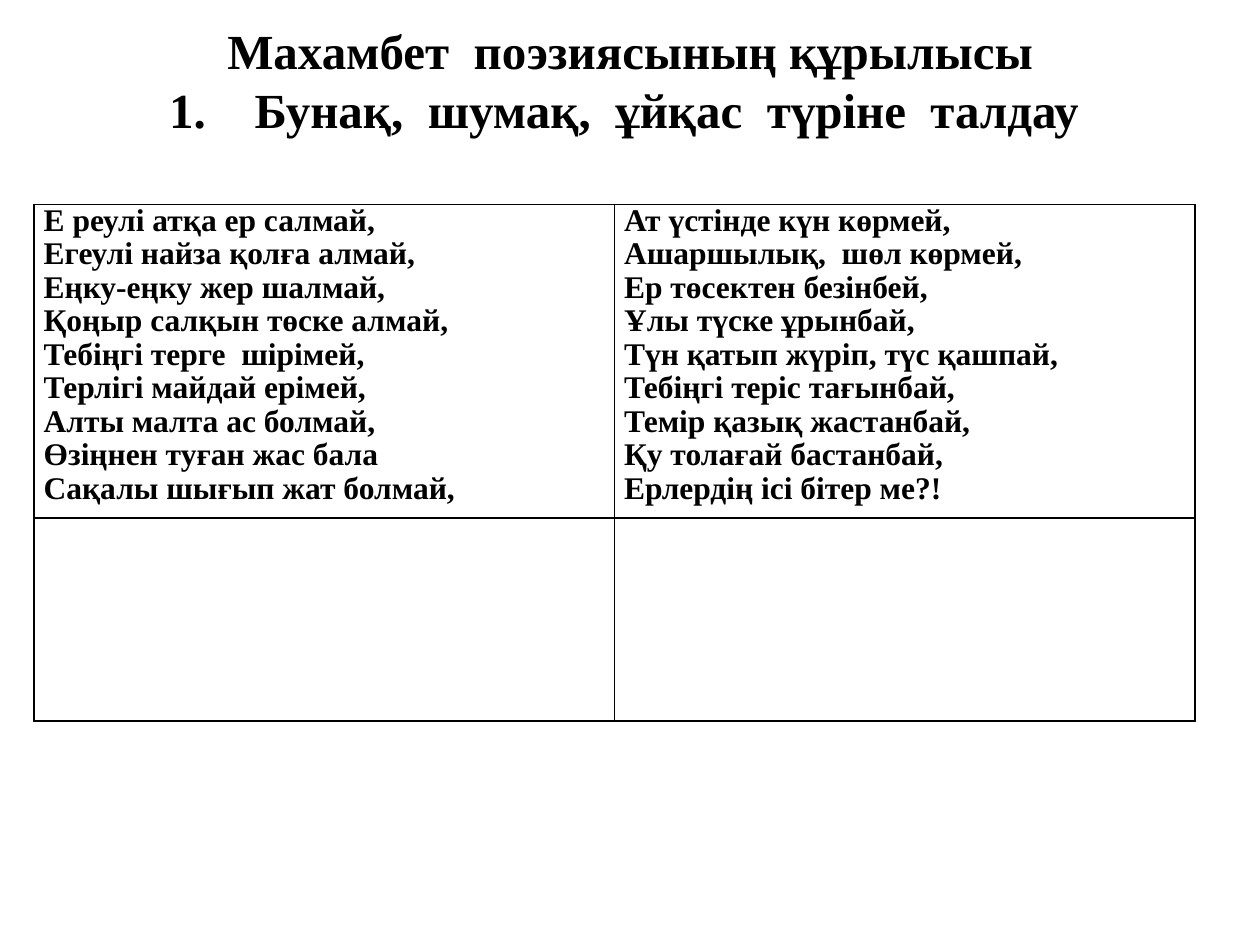
from lxml import etree
from pptx import Presentation
from pptx import util as u
from pptx.dml.color import RGBColor
from pptx.enum import text
from pptx.oxml import ns

BLACK = RGBColor(0x00, 0x00, 0x00)
FONT = "Times New Roman"

HEADING = ("Махамбет  поэзиясының құрылысы\v"
           "1.    Бунақ,  шумақ,  ұйқас  түріне  талдау ")
LEFT_VERSE = [
    "Е реулі атқа ер салмай,",
    "Егеулі найза қолға алмай,",
    "Еңку-еңку жер шалмай,",
    "Қоңыр салқын төске алмай,",
    "Тебіңгі терге  шірімей,",
    "Терлігі майдай ерімей,",
    "Алты малта ас болмай,",
    "Өзіңнен туған жас бала",
    "Сақалы шығып жат болмай,",
]
RIGHT_VERSE = [
    "Ат үстінде күн көрмей,",
    "Ашаршылық,  шөл көрмей,",
    "Ер төсектен безінбей,",
    "Ұлы түске ұрынбай,",
    "Түн қатып жүріп, түс қашпай,",
    "Тебіңгі теріс тағынбай,",
    "Темір қазық жастанбай,",
    "Қу толағай бастанбай,",
    "Ерлердің ісі бітер ме?!",
]


class VerseSlide:
    def __init__(self, prs):
        self.slide = prs.slides.add_slide(prs.slide_layouts[5])

    def style(self, paragraph, size):
        font = paragraph.font
        font.name, font.size, font.bold = FONT, u.Pt(size), True
        font.color.rgb = BLACK

    def title(self, wording, left, top, width, height):
        heading = self.slide.shapes.title
        heading.left, heading.top = u.Cm(left), u.Cm(top)
        heading.width, heading.height = u.Cm(width), u.Cm(height)
        frame = heading.text_frame
        frame.text = wording
        frame.word_wrap = True
        frame.auto_size = text.MSO_AUTO_SIZE.NONE
        frame.vertical_anchor = text.MSO_ANCHOR.MIDDLE
        frame.margin_bottom = u.Cm(1.63)  # lifts the two lines
        paragraph = frame.paragraphs[0]
        paragraph.alignment = text.PP_ALIGN.CENTER
        self.style(paragraph, 28)

    def border(self, cell):
        props = cell._tc.get_or_add_tcPr()
        for position, side in enumerate(("lnL", "lnR", "lnT", "lnB")):
            line = etree.Element(ns.qn("a:" + side), w=str(u.Pt(1)))
            fill = etree.SubElement(line, ns.qn("a:solidFill"))
            etree.SubElement(fill, ns.qn("a:srgbClr"), val=str(BLACK))
            props.insert(position, line)

    def table(self, rows, left, top, width, heights):
        grid = self.slide.shapes.add_table(
            len(rows), len(rows[0]), u.Cm(left), u.Cm(top),
            u.Cm(width), u.Cm(sum(heights))).table
        grid.first_row = grid.horz_banding = False
        for row, height, verses in zip(grid.rows, heights, rows):
            row.height = u.Cm(height)
            for cell, lines in zip(row.cells, verses):
                cell.fill.background()
                self.border(cell)
                cell.margin_left = cell.margin_right = u.Cm(0.19)
                cell.margin_top = cell.margin_bottom = 0
                cell.text = "\n".join(lines)
                for paragraph in cell.text_frame.paragraphs:
                    paragraph.line_spacing = 0.96
                    self.style(paragraph, 18)


def main():
    prs = Presentation()
    prs.slide_width, prs.slide_height = u.Cm(25.4), u.Cm(19.05)
    page = VerseSlide(prs)

    # Heading
    page.title(HEADING, 1.27, 0.76, 22.86, 3.18)

    # Two verses above an empty row for the analysis
    page.table([[LEFT_VERSE, RIGHT_VERSE], [[], []]],
               0.69, 4.12, 23.4, [6.32, 4.09])

    prs.save("out.pptx")


if __name__ == "__main__":
    main()
